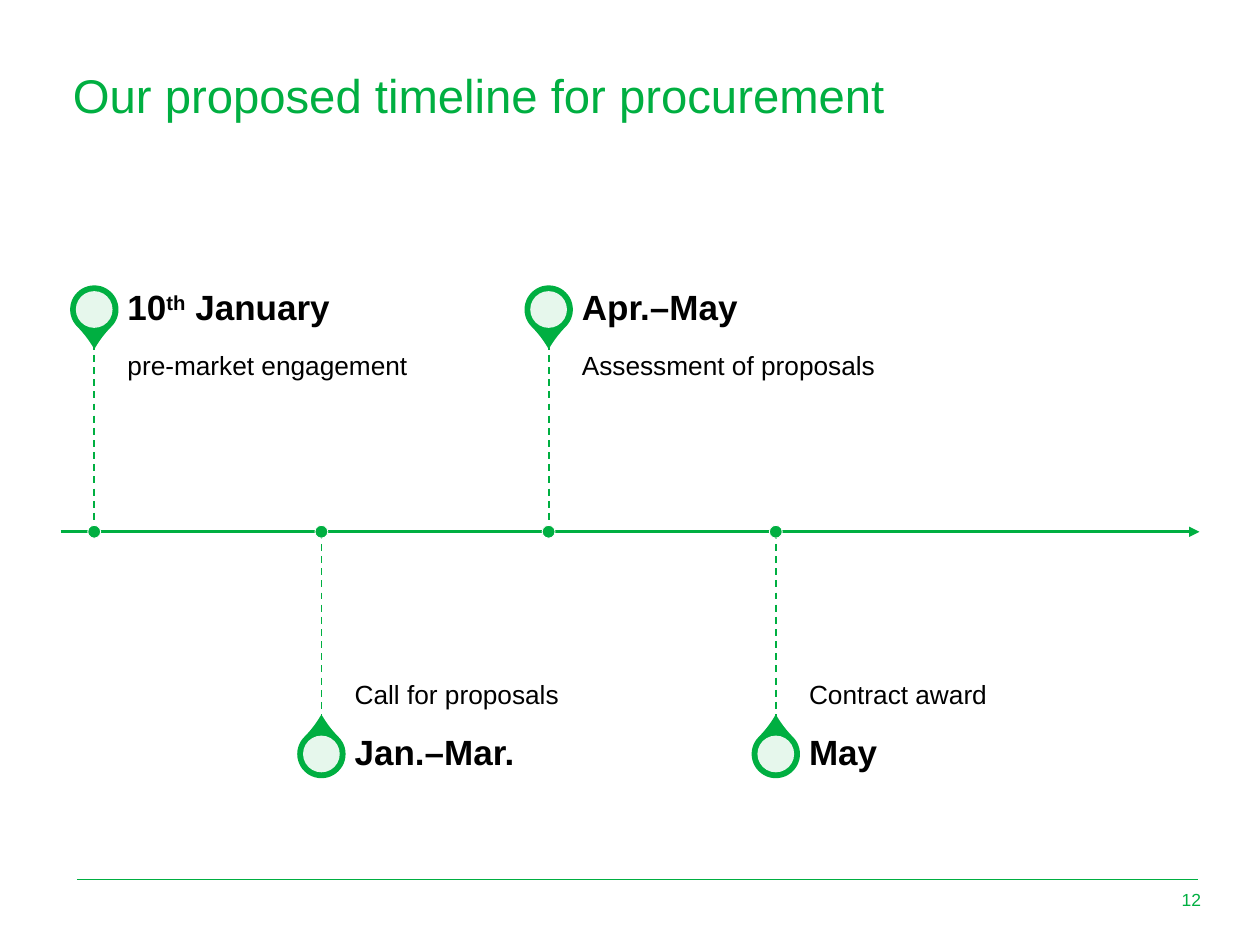
from dataclasses import dataclass

from lxml.etree import SubElement
from pptx import Presentation
from pptx.dml.color import RGBColor as RGB
from pptx.enum.dml import MSO_LINE as Dash
from pptx.enum.shapes import MSO_CONNECTOR as Conn, MSO_SHAPE as Kind
from pptx.enum.text import MSO_ANCHOR as Anchor, PP_ALIGN as Align
from pptx.oxml.ns import qn
from pptx.util import Cm, Pt


@dataclass(frozen=True)
class Theme:
    font: str = "Arial"
    green: RGB = RGB(0x00, 0xAF, 0x41)
    black: RGB = RGB(0, 0, 0)
    white: RGB = RGB(255, 255, 255)
    title: int = 27
    head: int = 20
    body: int = 15
    small: int = 10


theme = Theme()
deck = Presentation()
deck.slide_width, deck.slide_height = Cm(25.4), Cm(19.05)
slide = deck.slides.add_slide(deck.slide_layouts[5])
shapes = slide.shapes


def write(words, box, size, color=theme.black, bold=False, align=Align.LEFT,
          anchor=Anchor.MIDDLE, pads=(0.25, 0.13, 0.25, 0.13), shape=None):
    """Fill a text box, or the given shape; pieces between ^ marks are raised."""
    if shape is None:
        shape = shapes.add_textbox(0, 0, 0, 0)
    shape.left, shape.top, shape.width, shape.height = map(Cm, box)
    frame = shape.text_frame
    frame.word_wrap = True
    frame.vertical_anchor = anchor
    (frame.margin_left, frame.margin_top,
     frame.margin_right, frame.margin_bottom) = map(Cm, pads)
    para = frame.paragraphs[0]
    para.alignment, para.line_spacing = align, 0.9
    for i, piece in enumerate(words.split("^")):
        run = para.add_run()
        run.text = piece
        font = run.font
        font.name, font.size, font.bold = theme.font, Pt(size), bold
        font.color.rgb = color
        if i % 2:
            run._r.get_or_add_rPr().set("baseline", "30000")


def rule(x1, y1, x2, y2, width):
    """Draw a green straight line and return it."""
    line = shapes.add_connector(Conn.STRAIGHT, Cm(x1), Cm(y1), Cm(x2), Cm(y2))
    line.line.color.rgb, line.line.width = theme.green, Pt(width)
    SubElement(line._element.spPr, qn("a:effectLst"))
    return line


rule(1.55, 17.73, 24.16, 17.73, 0.5)
write("Our proposed timeline for procurement", (1.22, 1.3, 22.96, 1.35),
      theme.title, theme.green, shape=shapes.title)
write("12", (23.32, 17.65, 1.14, 1.02), theme.small, theme.green,
      align=Align.RIGHT)

# Time axis
mid = 10.72
axis = rule(1.22, mid, 24.18, mid, 1.5)
SubElement(axis.line._get_or_add_ln(), qn("a:tailEnd"), type="triangle")

# Steps stand above and below the axis in turn
steps = [
    ("10^th^ January", "pre-market engagement"),
    ("Jan.–Mar.", "Call for proposals"),
    ("Apr.–May", "Assessment of proposals"),
    ("May", "Contract award"),
]
first, gap = 1.9, 4.58
stem, reach = 3.81, 4.48  # axis to pin tip, axis to pin centre
wide, tall = 7.65, 1.35

for i, (date, task) in enumerate(steps):
    x = first + i * gap
    above = i % 2 == 0
    side = -1 if above else 1
    pin = mid + side * reach
    top = mid - stem if above else mid

    rule(x, top, x, top + stem, 1).line.dash_style = Dash.DASH
    for kind, y, size, fill, edge, width in (
        (Kind.TEAR, pin, 0.94, theme.green, theme.green, 1),
        (Kind.OVAL, pin, 0.74, theme.white, None, 0),
        (Kind.OVAL, mid, 0.26, theme.green, theme.white, 0.5),
    ):
        mark = shapes.add_shape(kind, Cm(x - size / 2), Cm(y - size / 2),
                                Cm(size), Cm(size))
        mark.shadow.inherit = False
        mark.fill.solid()
        mark.fill.fore_color.rgb = fill
        if kind == Kind.TEAR:
            mark.adjustments[0] = 1.15
            mark.rotation = 135 if above else 315
        if edge is None:
            mark.line.fill.background()
            tint = mark._element.spPr.find(".//" + qn("a:srgbClr"))
            SubElement(tint, qn("a:alpha"), val="90000")
        else:
            mark.line.color.rgb, mark.line.width = edge, Pt(width)

    left = x + 0.67
    write(task, (left, top, wide, stem), theme.body,
          anchor=Anchor.TOP if above else Anchor.BOTTOM,
          pads=(0, 0.25, 0.25, 0.41) if above else (0, 0.41, 0, 0.25))
    write(date, (left, top - tall if above else top + stem, wide, tall),
          theme.head, bold=True, pads=(0, 0, 0.36, 0))

deck.save("out.pptx")
